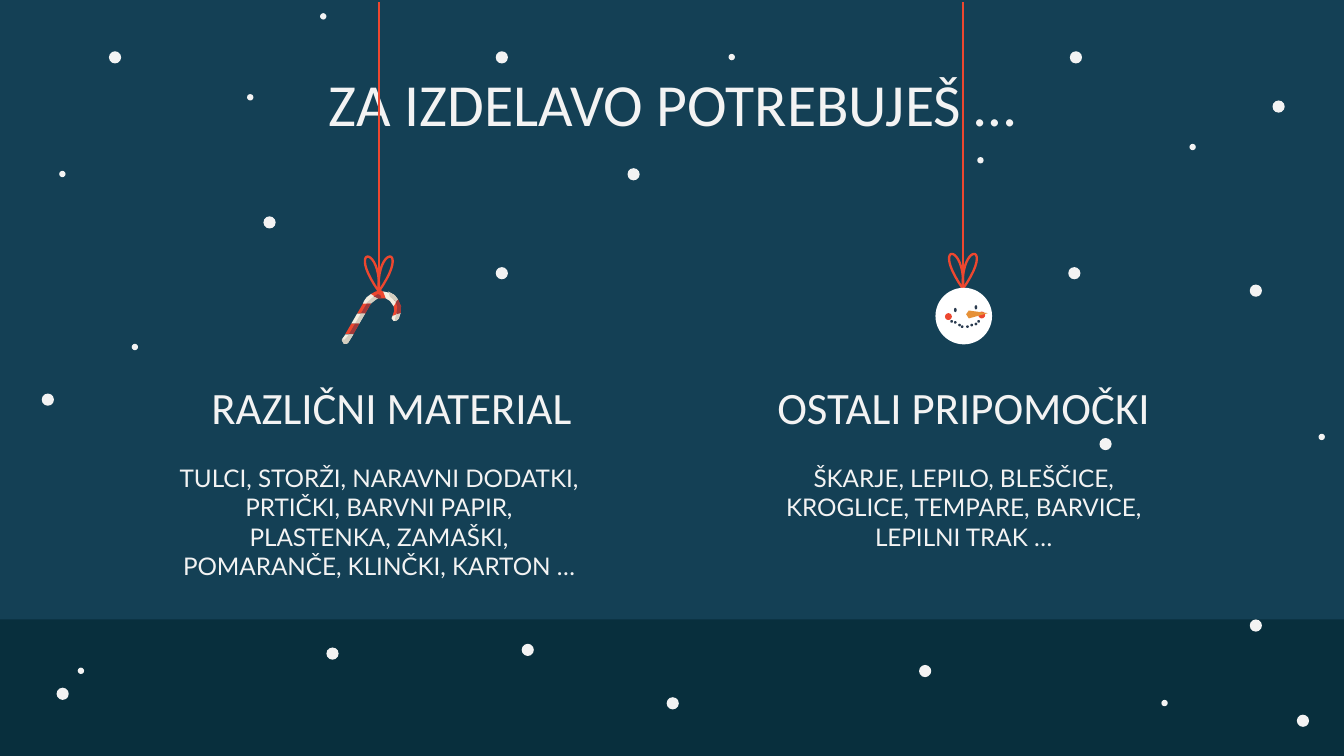
from lxml import etree
from pptx import Presentation
from pptx.dml.color import RGBColor
from pptx.enum import shapes, text
from pptx.oxml import ns
from pptx.util import Cm, Pt

THEME = {
    "night": "144055", "ground": "082F3D", "snow": "F3F3F3", "white": "FFFFFF",
    "red": "ED472F", "maroon": "A13939", "cream": "F4EEE0", "sand": "D3CDBF",
    "coal": "2A3B4F", "carrot": "E69138",
    "title": {"name": "Calibri", "size": Pt(32), "bold": False},
    "heading": {"name": "Calibri", "size": Pt(24), "bold": False},
    "list": {"name": "Lato", "size": Pt(13), "bold": False},
}


def colour(name):
    return RGBColor.from_string(THEME[name])


def paint(shape, fill):
    """Give a shape a flat fill with no outline and no shadow."""
    shape.shadow.inherit = False
    shape.fill.solid()
    shape.fill.fore_color.rgb = colour(fill)
    shape.line.fill.background()
    return shape


prs = Presentation()
prs.slide_width, prs.slide_height = Cm(25.4), Cm(14.29)
slide = prs.slides.add_slide(prs.slide_layouts.get_by_name("Comparison"))
slide.background.fill.solid()
slide.background.fill.fore_color.rgb = colour("night")
title = slide.shapes.title

# Ground and snow, behind the text
ground = slide.shapes.add_shape(shapes.MSO_SHAPE.RECTANGLE, 0, Cm(11.71), prs.slide_width, Cm(2.58))
title.element.addprevious(paint(ground, "ground").element)

snowfall = {
    0.23: [(2.06, 0.97), (23.62, 5.38), (20.22, 0.97), (17.37, 12.57), (9.37, 0.97),
           (24.51, 13.51), (0.79, 7.44), (24.05, 1.9), (12.6, 13.18), (23.62, 11.71),
           (6.17, 12.24), (1.07, 13), (11.86, 3.18), (9.37, 5.05), (4.98, 4.09),
           (20.78, 8.28), (20.19, 5.05), (9.86, 12.17)],
    0.12: [(1.12, 3.23), (22.48, 2.72), (21.95, 13.23), (18.47, 2.97), (1.47, 12.62),
           (13.77, 1.02), (6.05, 0.25), (4.67, 1.78), (2.49, 6.5), (24.92, 8.2)],
}
for size, places in snowfall.items():
    for x, y in places:
        flake = slide.shapes.add_shape(shapes.MSO_SHAPE.OVAL, Cm(x), Cm(y), Cm(size), Cm(size))
        title.element.addprevious(paint(flake, "snow").element)

# Title, headings and lists: placeholder, wording, style, anchor, box
TOP, BOTTOM = text.MSO_ANCHOR.TOP, text.MSO_ANCHOR.BOTTOM
wordings = [
    (0, "ZA IZDELAVO POTREBUJEŠ …", "title", TOP, (2.01, 1.02, 21.41, 1.6)),
    (2, "TULCI, STORŽI, NARAVNI DODATKI, PRTIČKI, BARVNI PAPIR, PLASTENKA, ZAMAŠKI, "
        "POMARANČE, KLINČKI, KARTON …", "list", TOP, (3.12, 8.51, 8.08, 2.72)),
    (4, "ŠKARJE, LEPILO, BLEŠČICE, KROGLICE, TEMPARE, BARVICE, LEPILNI TRAK …",
     "list", TOP, (14.17, 8.51, 8.08, 1.73)),
    (1, "RAZLIČNI MATERIAL", "heading", BOTTOM, (3.12, 7.14, 8.56, 1.3)),
    (3, "OSTALI PRIPOMOČKI", "heading", BOTTOM, (14.17, 7.14, 8.08, 1.3)),
]
placeholders = {p.placeholder_format.idx: p for p in slide.placeholders}
for idx, wording, style, anchor, box in wordings:
    holder = placeholders[idx]
    holder.left, holder.top, holder.width, holder.height = map(Cm, box)
    frame = holder.text_frame
    frame.text = wording
    frame_format = {"word_wrap": True, "auto_size": text.MSO_AUTO_SIZE.NONE, "vertical_anchor": anchor}
    frame_format.update({f"margin_{side}": Cm(0.25) for side in ("left", "top", "right", "bottom")})
    for key, value in frame_format.items():
        setattr(frame, key, value)
    paragraph = frame.paragraphs[0]
    paragraph.alignment = text.PP_ALIGN.CENTER
    paragraph.space_before = Pt(0)
    properties = paragraph._p.get_or_add_pPr()
    properties.set("marL", "0")
    properties.set("indent", "0")
    etree.SubElement(properties, ns.qn("a:buNone"))
    font = paragraph.runs[0].font
    for key, value in THEME[style].items():
        setattr(font, key, value)
    font.color.rgb = colour("snow")

# Strings with a two-loop bow: x, string end, knot height
for x, string_end, knot in [(18.2, 6.12, 5.46), (7.16, 5.54, 5.51)]:
    string = slide.shapes.add_connector(shapes.MSO_CONNECTOR.STRAIGHT, Cm(x), Cm(string_end), Cm(x), Cm(0.03))
    string.line.color.rgb = colour("red")
    string.line.width = Pt(0.75)
    etree.SubElement(string._element.spPr, ns.qn("a:effectLst"))
    for side in (-1, 1):
        curve = []
        for step in range(1, 20):
            t = step / 20
            out, back = 3 * t * (1 - t) ** 2, 3 * t ** 2 * (1 - t)
            curve.append((Cm(x + side * (0.62 * out - 0.06 * back)), Cm(knot - 0.88 * (out + back))))
        builder = slide.shapes.build_freeform(Cm(x), Cm(knot))
        builder.add_line_segments(curve, close=True)
        bow = builder.convert_to_shape()
        bow.shadow.inherit = False
        bow.fill.background()
        bow.line.color.rgb = colour("red")
        bow.line.width = Pt(1.25)

# Snowman: face, eyes, mouth, cheeks
mouth = [(17.96, 6.05), (18.03, 6.07), (18.11, 6.12), (18.16, 6.15),
         (18.26, 6.15), (18.34, 6.12), (18.42, 6.1), (18.47, 6.05)]
features = [
    ("white", 1.07, 1.07, [(17.68, 5.44)]),
    ("coal", 0.05, 0.08, [(18.03, 5.82), (18.42, 5.77)]),
    ("coal", 0.05, 0.05, mouth),
    ("red", 0.13, 0.13, [(17.86, 5.92), (18.49, 5.89)]),
]
for fill, width, height, places in features:
    for x, y in places:
        paint(slide.shapes.add_shape(shapes.MSO_SHAPE.OVAL, Cm(x), Cm(y), Cm(width), Cm(height)), fill)

# Carrot nose and the curved end of the candy cane, with its shaded edge
patches = [
    ("carrot", [(18.31, 5.87), (18.26, 5.94), (18.31, 6.02), (18.67, 5.92)]),
    ("cream", [(7.49, 5.92), (7.42, 5.97), (7.4, 6.02), (7.44, 6.07), (7.5, 6.06), (7.54, 6.02), (7.57, 5.92)]),
    ("red", [(7.44, 5.66), (7.44, 5.79), (7.45, 5.88), (7.42, 5.97), (7.57, 5.92), (7.58, 5.79), (7.52, 5.66)]),
    ("cream", [(7.24, 5.51), (7.24, 5.59), (7.29, 5.64), (7.37, 5.69), (7.44, 5.79), (7.52, 5.66),
               (7.46, 5.58), (7.39, 5.54)]),
    ("red", [(7.21, 5.49), (7.1, 5.51), (7.01, 5.56), (7.01, 5.64), (7.14, 5.64), (7.29, 5.64), (7.24, 5.51)]),
    ("cream", [(7.01, 5.56), (6.93, 5.62), (6.88, 5.69), (6.86, 5.74), (6.91, 5.79), (7.01, 5.74),
               (7.07, 5.68), (7.14, 5.64)]),
    ("sand", [(7.49, 5.92), (7.47, 6.02), (7.47, 6.07), (7.53, 6.03), (7.57, 5.92)]),
    ("maroon", [(7.14, 5.56), (7.06, 5.61), (7.14, 5.64), (7.21, 5.64), (7.19, 5.58)]),
    ("sand", [(7.06, 5.61), (6.93, 5.72), (6.93, 5.74), (7.01, 5.74), (7.14, 5.64)]),
    ("maroon", [(7.44, 5.66), (7.47, 5.69), (7.51, 5.8), (7.49, 5.94), (7.57, 5.92), (7.58, 5.79), (7.52, 5.66)]),
    ("sand", [(7.34, 5.51), (7.37, 5.61), (7.47, 5.69), (7.47, 5.72), (7.52, 5.66), (7.46, 5.58), (7.39, 5.54)]),
]
# Straight part: slanted stripes at equal steps, shaded on the right half
for row, (light, dark) in enumerate([("red", "maroon"), ("cream", "sand"), ("red", "maroon")]):
    right, upper = 7.01 - 0.11 * row, 5.74 + 0.19 * row
    for fill, width in [(light, 0.15), (dark, 0.08)]:
        patches.append((fill, [(right - width, upper), (right, upper),
                               (right - 0.11, upper + 0.19), (right - width - 0.11, upper + 0.19)]))
patches += [
    ("cream", [(6.53, 6.32), (6.46, 6.42), (6.5, 6.5), (6.55, 6.5), (6.58, 6.48), (6.68, 6.32)]),
    ("sand", [(6.6, 6.32), (6.55, 6.38), (6.5, 6.43), (6.48, 6.4), (6.46, 6.44), (6.5, 6.5),
              (6.55, 6.5), (6.58, 6.48), (6.68, 6.32)]),
]
for fill, points in patches:
    corners = [(Cm(x), Cm(y)) for x, y in points]
    builder = slide.shapes.build_freeform(*corners[0])
    builder.add_line_segments(corners[1:], close=True)
    paint(builder.convert_to_shape(), fill)

prs.save("out.pptx")
